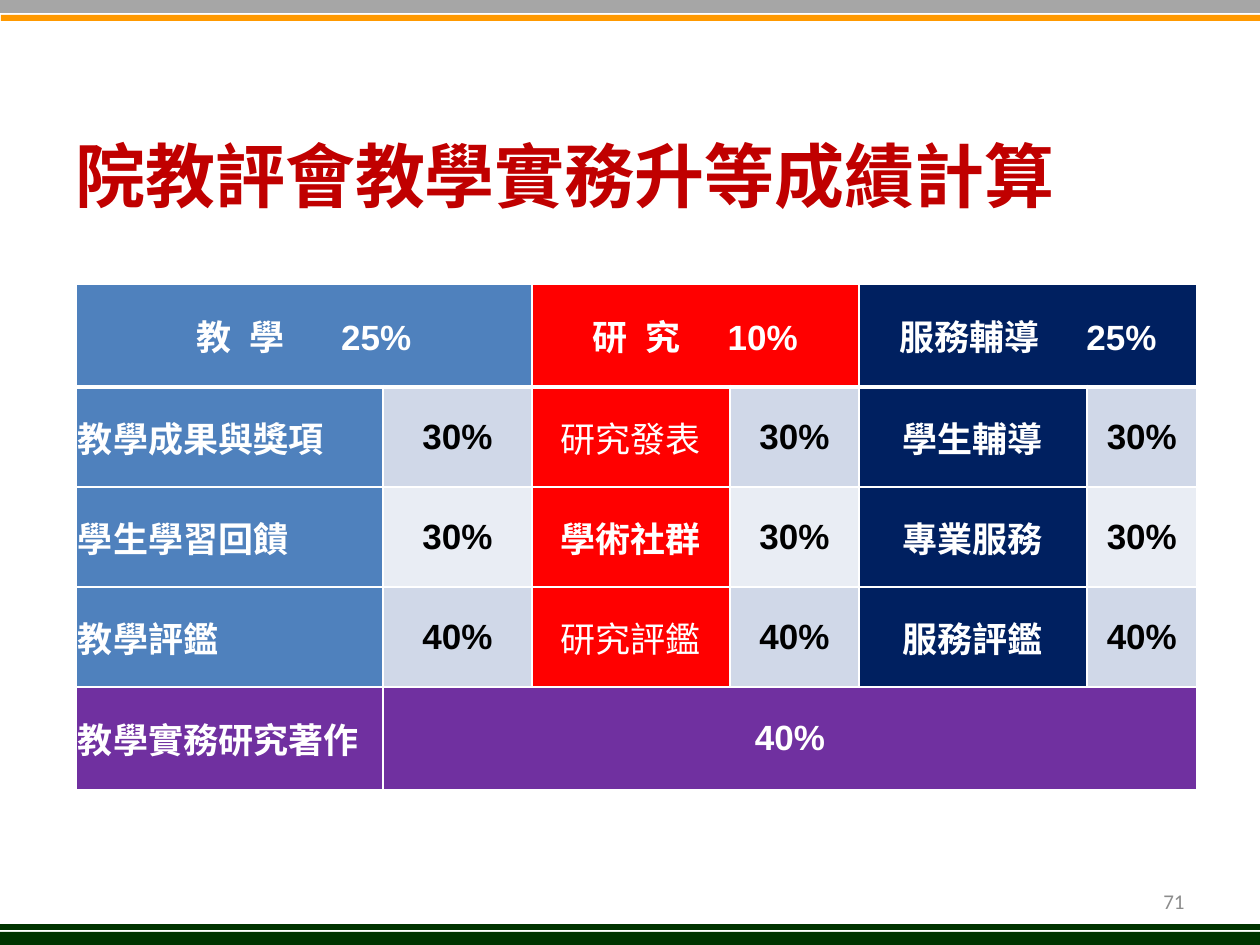
from lxml import etree
from pptx import Presentation
from pptx import util as u
from pptx.dml.color import RGBColor
from pptx.enum import shapes, text
from pptx.oxml.ns import qn

SCALE = 914400 / 126
COLORS = {
    "gray": "A6A6A6", "orange": "FF9900", "green": "003300", "title": "C00000",
    "teaching": "4F81BD", "research": "FF0000", "service": "002060",
    "works": "7030A0", "band_dark": "D0D8E8", "band_light": "E9EDF4",
    "white": "FFFFFF", "black": "000000", "number": "8C8C8C",
}
CJK_FONT = "Noto Sans CJK SC"
SPACE_WIDTH = 5.56  # points, one bold 20 pt space
COLUMN_WIDTHS = [307, 149, 198, 129, 228, 110]
ROW_HEIGHTS = [103, 100, 100, 100, 103]
# Each heading: words, with the number of spaces that follows each word but the last
GROUPS = [
    ("teaching", ["教", "學", "25%"], [2, 6],
     [("教學成果與獎項", "30%"), ("學生學習回饋", "30%"), ("教學評鑑", "40%")]),
    ("research", ["研", "究", "10%"], [2, 5],
     [("研究發表", "30%"), ("學術社群", "30%"), ("研究評鑑", "40%")]),
    ("service", ["服務輔導", "25%"], [5],
     [("學生輔導", "30%"), ("專業服務", "30%"), ("服務評鑑", "40%")]),
]
REGULAR_LABELS = {"研究發表", "研究評鑑"}


def px(value):
    return u.Emu(round(value * SCALE))


def rgb(name):
    return RGBColor.from_string(COLORS[name])


def style_run(run, size, color, bold, font="Arial"):
    run.font.size = u.Pt(size)
    run.font.bold = bold
    run.font.name = font
    run.font.color.rgb = rgb(color)
    east_asian = etree.SubElement(run.font._element, qn("a:ea"))
    east_asian.set("typeface", CJK_FONT)


def add_bar(slide, left, top, width, height, color):
    shape = slide.shapes.add_shape(
        shapes.MSO_SHAPE.RECTANGLE, px(left), px(top), px(width), px(height))
    shape.shadow.inherit = False
    shape.fill.solid()
    shape.fill.fore_color.rgb = rgb(color)
    shape.line.fill.background()


def add_edge_bars(slide, left, top, width, height):
    add_bar(slide, left, top, width, 13, "gray")
    add_bar(slide, left + 1, top + 15, width, 6, "orange")
    add_bar(slide, left, top + height - 21, width, 6, "green")
    add_bar(slide, left, top + height - 13, width, 13, "green")


def add_text(slide, left, top, width, height, words, size, color, bold, font, align):
    box = slide.shapes.add_textbox(px(left), px(top), px(width), px(height))
    frame = box.text_frame
    frame.word_wrap = True
    frame.vertical_anchor = text.MSO_ANCHOR.MIDDLE
    frame.text = words
    paragraph = frame.paragraphs[0]
    paragraph.alignment = align
    style_run(paragraph.runs[0], size, color, bold, font)


def set_borders(cell, row):
    """Draw white cell edges, heavier below the heading row."""
    properties = cell._tc.get_or_add_tcPr()
    widths = {"lnL": 1, "lnR": 1, "lnT": 3 if row == 1 else 1, "lnB": 3 if row == 0 else 1}
    for tag, width in widths.items():
        line = etree.SubElement(properties, qn(f"a:{tag}"), w=str(u.Pt(width)))
        fill = etree.SubElement(line, qn("a:solidFill"))
        etree.SubElement(fill, qn("a:srgbClr"), val=COLORS["white"])


def fill_cell(cell, words, fill, color="white", align=text.PP_ALIGN.CENTER, bold=True):
    cell.margin_left = cell.margin_right = px(2)
    cell.margin_top = cell.margin_bottom = 0
    cell.vertical_anchor = text.MSO_ANCHOR.MIDDLE
    cell.fill.solid()
    cell.fill.fore_color.rgb = rgb(fill)
    cell.text = words
    paragraph = cell.text_frame.paragraphs[0]
    paragraph.alignment = align
    for run in paragraph.runs:
        style_run(run, 20, color, bold)


def fill_heading(cell, words, gaps, fill):
    """Set the words apart by single spaces widened with character spacing."""
    fill_cell(cell, words[0], fill)
    paragraph = cell.text_frame.paragraphs[0]
    for gap, word in zip(gaps, words[1:]):
        for part in (" ", word):
            run = paragraph.add_run()
            run.text = part
            style_run(run, 20, "white", True)
            if part == " ":
                run.font._element.set("spc", str(round((gap - 1) * SPACE_WIDTH * 100)))


def add_score_table(slide, left, top):
    frame = slide.shapes.add_table(
        len(ROW_HEIGHTS), len(COLUMN_WIDTHS), px(left), px(top),
        px(sum(COLUMN_WIDTHS)), px(sum(ROW_HEIGHTS)))
    table = frame.table
    for column, width in zip(table.columns, COLUMN_WIDTHS):
        column.width = px(width)
    for index, (row, height) in enumerate(zip(table.rows, ROW_HEIGHTS)):
        row.height = px(height)
        for cell in row.cells:
            set_borders(cell, index)

    for group, (color, words, gaps, items) in enumerate(GROUPS):
        column = 2 * group
        table.cell(0, column).merge(table.cell(0, column + 1))
        fill_heading(table.cell(0, column), words, gaps, color)
        align = text.PP_ALIGN.CENTER if group else text.PP_ALIGN.LEFT
        for row, (label, share) in enumerate(items, start=1):
            fill_cell(table.cell(row, column), label, color, align=align,
                      bold=label not in REGULAR_LABELS)
            band = "band_dark" if row % 2 else "band_light"
            fill_cell(table.cell(row, column + 1), share, band, "black")

    last = len(ROW_HEIGHTS) - 1
    table.cell(last, 1).merge(table.cell(last, len(COLUMN_WIDTHS) - 1))
    fill_cell(table.cell(last, 0), "教學實務研究著作", "works", align=text.PP_ALIGN.LEFT)
    fill_cell(table.cell(last, 1), "40%", "works")


def main():
    presentation = Presentation()
    presentation.slide_width = px(1260)
    presentation.slide_height = px(945)
    slide = presentation.slides.add_slide(presentation.slide_layouts[6])
    add_edge_bars(slide, 0, 0, 1260, 945)
    add_text(slide, 63, 106, 1134, 137, "院教評會教學實務升等成績計算",
             40, "title", True, CJK_FONT, text.PP_ALIGN.LEFT)
    add_score_table(slide, 76, 284)
    add_text(slide, 903, 876, 294, 50, "71",
             12, "number", False, "Calibri", text.PP_ALIGN.RIGHT)
    presentation.save("out.pptx")


if __name__ == "__main__":
    main()
